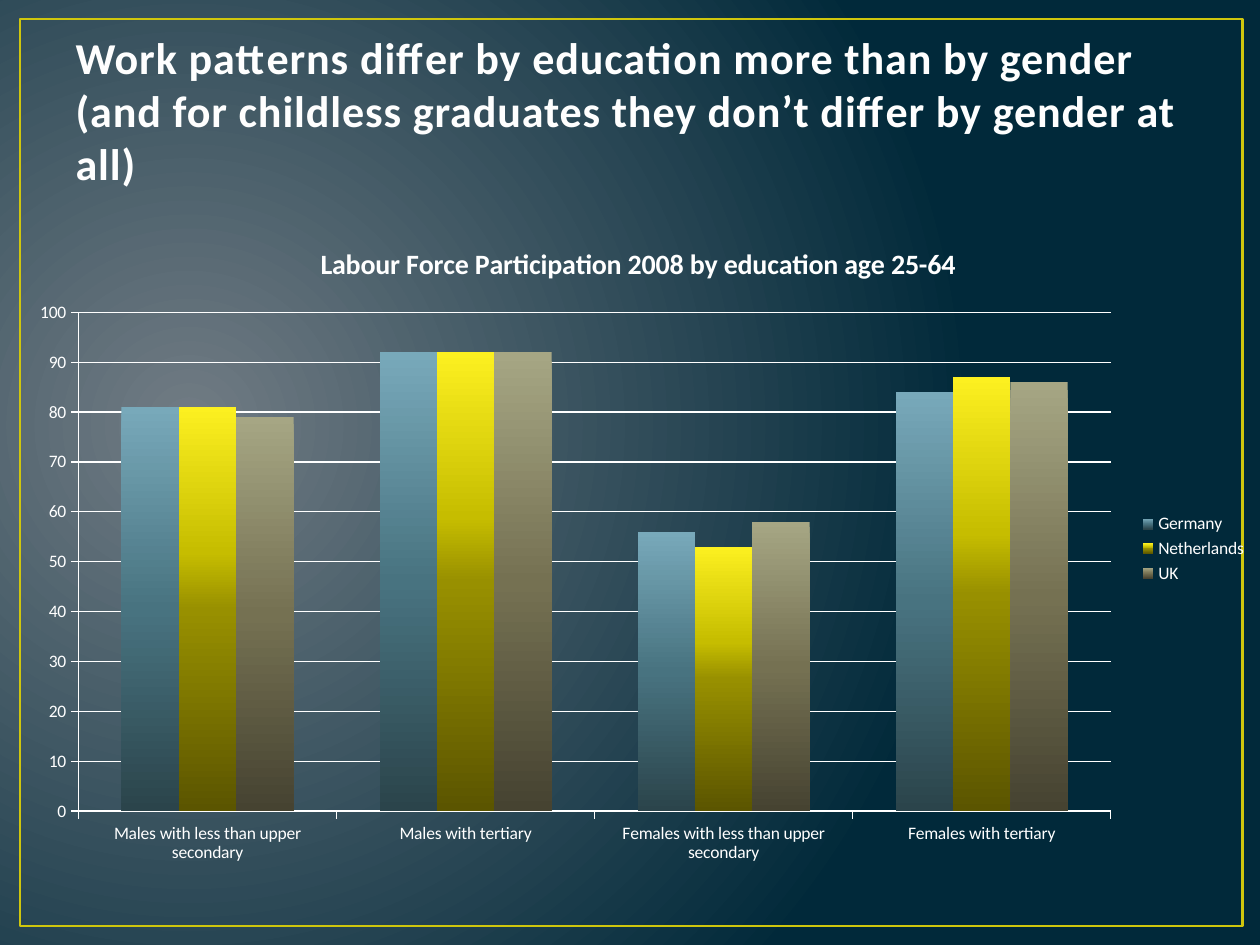
from lxml import etree
from pptx import Presentation
from pptx.chart.data import CategoryChartData
from pptx.dml.color import RGBColor
from pptx.enum.chart import XL_CHART_TYPE, XL_LEGEND_POSITION, XL_TICK_MARK
from pptx.enum.shapes import MSO_SHAPE
from pptx.enum.text import MSO_ANCHOR, MSO_AUTO_SIZE, PP_ALIGN
from pptx.oxml import parse_xml
from pptx.oxml.ns import nsdecls, qn
from pptx.util import Inches, Pt

COLUMNS = XL_CHART_TYPE.COLUMN_CLUSTERED
LEGEND_RIGHT = XL_LEGEND_POSITION.RIGHT
TICK_OUT = XL_TICK_MARK.OUTSIDE
RECTANGLE = MSO_SHAPE.RECTANGLE
BOTTOM = MSO_ANCHOR.BOTTOM
NO_AUTOFIT = MSO_AUTO_SIZE.NONE
LEFT = PP_ALIGN.LEFT

FONT = "Calibri"
COLORS = {
    "glow": "717C84",
    "night": "01293A",
    "frame": "CFC60D",
    "title": "FEFEFE",
    "title_outline": "384F55",
    "chart": "FFFFFF",
}

# Each country: participation rates and bar gradient from top to bottom
GROUPS = [
    "Males with less than upper secondary",
    "Males with tertiary",
    "Females with less than upper secondary",
    "Females with tertiary",
]
COUNTRIES = {
    "Germany": ([81, 92, 56, 84], [(0, "78A9BA"), (50, "487380"), (100, "2B444B")]),
    "Netherlands": ([81, 92, 53, 87],
                    [(0, "FCF020"), (36, "C6BD00"), (50, "989000"), (100, "5B5500")]),
    "UK": ([79, 92, 58, 86], [(0, "A6A684"), (50, "757152"), (100, "464331")]),
}


class SlideBuilder:
    """Holds the style and the slide being built."""

    def __init__(self, slide, font, colors):
        self.slide = slide
        self.font = font
        self.colors = colors

    def rgb(self, name):
        return RGBColor.from_string(self.colors[name])

    def style_font(self, font, size, color, bold=False):
        font.name = self.font
        font.size = Pt(size)
        font.bold = bold
        font.color.rgb = self.rgb(color)

    def set_stops(self, gradient, stops):
        stop_list = gradient.find(qn("a:gsLst"))
        for stop in list(stop_list):
            stop_list.remove(stop)
        for position, color in stops:
            stop = etree.SubElement(stop_list, qn("a:gs"), pos=str(position * 1000))
            etree.SubElement(stop, qn("a:srgbClr"), val=color)

    def background(self):
        self.slide.background.fill.gradient()
        gradient = self.slide.element.xpath("./p:cSld/p:bg//a:gradFill")[0]
        self.set_stops(gradient, [(0, self.colors["glow"]), (100, self.colors["night"])])
        gradient.replace(gradient.find(qn("a:lin")), parse_xml(
            f'<a:path {nsdecls("a")} path="circle">'
            '<a:fillToRect l="15000" t="50000" r="85000" b="60000"/></a:path>'))

    def frame(self, left, top, width, height):
        border = self.slide.shapes.add_shape(
            RECTANGLE, Inches(left), Inches(top), Inches(width), Inches(height))
        border.shadow.inherit = False
        border.fill.background()
        border.line.color.rgb = self.rgb("frame")
        border.line.width = Pt(1.5)
        # Behind the title
        self.slide.shapes.element.insert(2, border.element)

    def title(self, text, left, top, width, height):
        heading = self.slide.shapes.title
        heading.left, heading.top = Inches(left), Inches(top)
        heading.width, heading.height = Inches(width), Inches(height)
        frame = heading.text_frame
        frame.word_wrap = True
        frame.auto_size = NO_AUTOFIT
        frame.vertical_anchor = BOTTOM
        paragraph = frame.paragraphs[0]
        paragraph.text = text
        paragraph.alignment = LEFT
        for run in paragraph.runs:
            self.style_font(run.font, 25.2, "title", bold=True)
            properties = run.font._element
            properties.set("spc", "50")
            properties.insert(0, parse_xml(
                f'<a:ln {nsdecls("a")} w="13335"><a:solidFill>'
                f'<a:srgbClr val="{self.colors["title_outline"]}"/></a:solidFill></a:ln>'))

    def axis_line(self, line):
        line.color.rgb = self.rgb("chart")
        line.width = Pt(0.75)

    def plot_layout(self, chart, x, y, w, h):
        plot_area = chart._chartSpace.chart.plotArea
        for layout in plot_area.findall(qn("c:layout")):
            plot_area.remove(layout)
        layout = etree.Element(qn("c:layout"))
        manual = etree.SubElement(layout, qn("c:manualLayout"))
        settings = {"layoutTarget": "inner", "xMode": "edge", "yMode": "edge",
                    "x": x, "y": y, "w": w, "h": h}
        for tag, value in settings.items():
            etree.SubElement(manual, qn(f"c:{tag}"), val=str(value))
        plot_area.insert(0, layout)

    def column_chart(self, title, groups, countries, left, top, width, height):
        data = CategoryChartData()
        data.categories = groups
        for country, (rates, _) in countries.items():
            data.add_series(country, rates)
        chart = self.slide.shapes.add_chart(
            COLUMNS, Inches(left), Inches(top), Inches(width), Inches(height), data).chart
        self.style_font(chart.font, 10, "chart")

        # Heading and legend
        chart.has_title = True
        heading = chart.chart_title.text_frame.paragraphs[0]
        heading.text = title
        self.style_font(heading.runs[0].font, 16, "chart", bold=True)
        chart.has_legend = True
        chart.legend.position = LEGEND_RIGHT
        chart.legend.include_in_layout = False

        # Axes
        rate_axis = chart.value_axis
        rate_axis.minimum_scale, rate_axis.maximum_scale = 0, 100
        rate_axis.major_unit = 10
        rate_axis.has_major_gridlines = True
        self.axis_line(rate_axis.major_gridlines.format.line)
        for axis in (chart.category_axis, rate_axis):
            axis.major_tick_mark = TICK_OUT
            self.axis_line(axis.format.line)

        # Bars
        plot = chart.plots[0]
        plot.gap_width = 150
        plot.overlap = 0
        plot.vary_by_categories = False
        for series, (_, stops) in zip(plot.series, countries.values()):
            fill = series.format.fill
            fill.gradient()
            fill.gradient_angle = 270
            self.set_stops(series._element.xpath("./c:spPr/a:gradFill")[0], stops)
        self.plot_layout(chart, 0.05, 0.14, 0.83, 0.76)


def main():
    presentation = Presentation()
    presentation.slide_width = Inches(10)
    presentation.slide_height = Inches(7.5)
    slide = presentation.slides.add_slide(presentation.slide_layouts[5])

    builder = SlideBuilder(slide, FONT, COLORS)
    builder.background()
    builder.frame(0.16, 0.15, 9.7, 7.2)
    builder.title(
        "Work patterns differ by education more than by gender\n"
        "(and for childless graduates they don’t differ by gender at all)",
        0.5, 0.3, 9, 1.25)
    builder.column_chart(
        "Labour Force Participation 2008 by education age 25-64",
        GROUPS, COUNTRIES, 0.13, 1.75, 9.87, 5.21)
    presentation.save("out.pptx")


if __name__ == "__main__":
    main()
